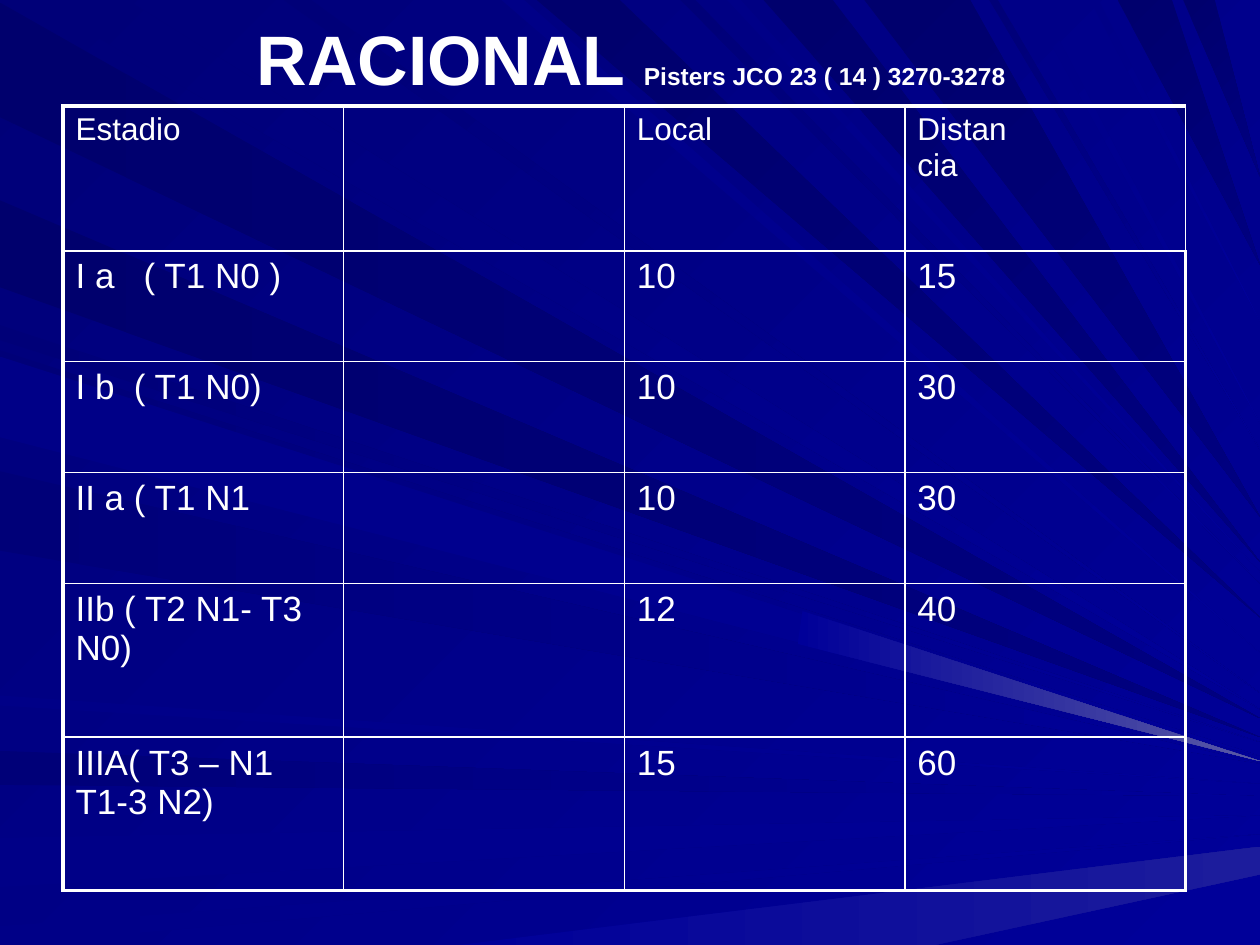
"""Build a slide with a recurrence table by tumour stage over a field of blue rays."""
from lxml.etree import SubElement
from pptx import Presentation
from pptx.dml.color import RGBColor
from pptx.enum.text import MSO_ANCHOR as Anchor, MSO_AUTO_SIZE as AutoSize, PP_ALIGN as Align
from pptx.oxml import parse_xml
from pptx.oxml.ns import nsdecls, qn
from pptx.util import Inches, Pt

GRID_COLUMNS, GRID_ROWS = 10, 7.5
CELL = Inches(1)
WHITE = "FFFFFF"
TITLE_BOX = (0.51, 0, 9, 0.91)
TABLE_BOX = (0.5, 0.84, 8.91, 6.22)
HEADER_ROW, SHORT_ROW, TALL_ROW = 1.15, 0.88, 1.22
ROW_HEIGHTS = [HEADER_ROW] + [SHORT_ROW] * 3 + [TALL_ROW] * 2
THICK, THIN = 2.25, 1

STAGES = [
    ("Estadio", "", "Local", "Distan\ncia"),
    ("I a   ( T1 N0 )", "", "10", "15"),
    ("I b  ( T1 N0)", "", "10", "30"),
    ("II a ( T1 N1", "", "10", "30"),
    ("IIb ( T2 N1- T3 N0)", "", "12", "40"),
    ("IIIA( T3 – N1 T1-3 N2)", "", "15", "60"),
]

DEEP = ("00006D", "000080")
MIDDLE = ("000078", "000099")
SOFT = ("000087", "000099")
GLOW = ("000099", "5A5AA6")
LEFT_RAYS = [
    (DEEP, 0.02, 0.93, 5.7),
    (MIDDLE, 5.96, 6.23, 6.32),
    (SOFT, 6.65, 7.04, 6.47),
    (SOFT, 7.35, 7.5, 6.62),
    (MIDDLE, 2.58, 2.7, 5.89),
    (DEEP, 1.59, 2.28, 5.85),
    (MIDDLE, 2.78, 3.42, 6),
    (MIDDLE, 3.74, 4.37, 6.06),
    (SOFT, 5.52, 5.6, 6.22),
    (SOFT, 2.83, 3.47, 6.04),
]
TOP_RAYS = [
    (MIDDLE, 0.26, 1.01, 5.63),
    (SOFT, 3.98, 4.16, 5.18),
    (DEEP, 4.26, 4.92, 4.9),
    (MIDDLE, 5.4, 5.52, 4.63),
    (DEEP, 6.06, 6.61, 4.46),
    (DEEP, 8.87, 9.3, 2.1),
    (DEEP, 9.39, 9.64, 1.4),
    (MIDDLE, 2.25, 2.47, 5.5),
    (SOFT, 5.77, 5.88, 4.54),
    (DEEP, 6.86, 7.7, 4.1),
    (MIDDLE, 7.85, 7.92, 3.57),
    (SOFT, 8.15, 8.24, 3.36),
    (SOFT, 8.65, 8.72, 2.55),
]
BRIGHT_TIP = [(6.37, 4.85), (6.33, 5.11), (GRID_COLUMNS, 6.04)]
LOWER_BEAM = [(3.64, GRID_ROWS), (GRID_COLUMNS, 6.72), (GRID_COLUMNS, 6.94), (7.42, GRID_ROWS)]


def color(value):
    """Turn a hex string into a colour."""
    return RGBColor.from_string(value)


def grid(*lengths):
    """Turn grid units into slide lengths."""
    return [round(length * CELL) for length in lengths]


def paint(fill, colors, angle):
    """Fill with a gradient of two colours, turned clockwise by the angle."""
    fill.gradient()
    fill.gradient_angle = -angle % 360
    for stop, value in zip(fill.gradient_stops, colors):
        stop.color.rgb = color(value)


def add_text(paragraph, text, size=18, bold=False, value=WHITE, font="Arial"):
    """Add a formatted run to a paragraph."""
    run = paragraph.add_run()
    run.text = text
    run.font.size, run.font.bold, run.font.name = Pt(size), bold, font
    run.font.color.rgb = color(value)


def add_ray(slide, colors, points, angle=0):
    """Draw one ray as a closed outline."""
    corners = [grid(*point) for point in points]
    builder = slide.shapes.build_freeform(*corners[0])
    builder.add_line_segments(corners[1:], close=True)
    ray = builder.convert_to_shape()
    ray.shadow.inherit = False
    ray.line.fill.background()
    paint(ray.fill, colors, angle)


def add_background(slide):
    """Paint the slide and the rays that run from its left and top to its right edge."""
    paint(slide.background.fill, MIDDLE, 45)
    for colors, start, end, tip in LEFT_RAYS:
        add_ray(slide, colors, [(0, start), (0, end), (GRID_COLUMNS, tip)])
    for colors, start, end, tip in TOP_RAYS:
        add_ray(slide, colors, [(start, 0), (end, 0), (GRID_COLUMNS, tip)], angle=45)
    add_ray(slide, GLOW, BRIGHT_TIP)
    add_ray(slide, ("000099", "1C1C9C"), LOWER_BEAM)


def add_title(slide, box):
    """Place the heading and its citation in the title placeholder."""
    title = slide.shapes.title
    slide.shapes.element.append(title.element)
    title.left, title.top, title.width, title.height = grid(*box)
    frame = title.text_frame
    frame.word_wrap, frame.auto_size = True, AutoSize.NONE
    frame.vertical_anchor = Anchor.MIDDLE
    paragraph = frame.paragraphs[0]
    paragraph.alignment = Align.CENTER
    add_text(paragraph, "RACIONAL ", size=40, bold=True)
    add_text(paragraph, "Pisters JCO 23 ( 14 ) 3270-3278", size=14, bold=True)


def add_borders(cell, **widths):
    """Draw white cell borders, with widths in points by side."""
    properties = cell._tc.get_or_add_tcPr()
    for position, (side, width) in enumerate(widths.items()):
        line = parse_xml(f'<a:ln{side} {nsdecls("a")} w="{Pt(width)}"/>')
        fill = SubElement(line, qn("a:solidFill"))
        SubElement(fill, qn("a:srgbClr"), val=WHITE)
        properties.insert(position, line)


def add_stage_table(slide, box):
    """Place the table of stages, with a thick outer frame."""
    last_row, last_column = len(STAGES) - 1, len(STAGES[0]) - 1
    table = slide.shapes.add_table(last_row + 1, last_column + 1, *grid(*box)).table
    table.first_row = table.horz_banding = False
    for row, height in zip(table.rows, grid(*ROW_HEIGHTS)):
        row.height = height
    for i, stage in enumerate(STAGES):
        for j, text in enumerate(stage):
            cell = table.cell(i, j)
            cell.fill.background()
            add_borders(
                cell,
                L=THIN if j else THICK,
                R=THICK if j == last_column and i else THIN,
                T=THIN if i else THICK,
                B=THICK if i == last_row else THIN,
            )
            for k, line in enumerate(text.split("\n") if text else []):
                frame = cell.text_frame
                paragraph = frame.add_paragraph() if k else frame.paragraphs[0]
                add_text(paragraph, line, size=20 if i else 18)


def main():
    """Build and save the presentation."""
    presentation = Presentation()
    presentation.slide_width, presentation.slide_height = grid(GRID_COLUMNS, GRID_ROWS)
    slide = presentation.slides.add_slide(presentation.slide_layouts[5])
    add_background(slide)
    add_title(slide, TITLE_BOX)
    add_stage_table(slide, TABLE_BOX)
    presentation.save("out.pptx")


if __name__ == "__main__":
    main()
